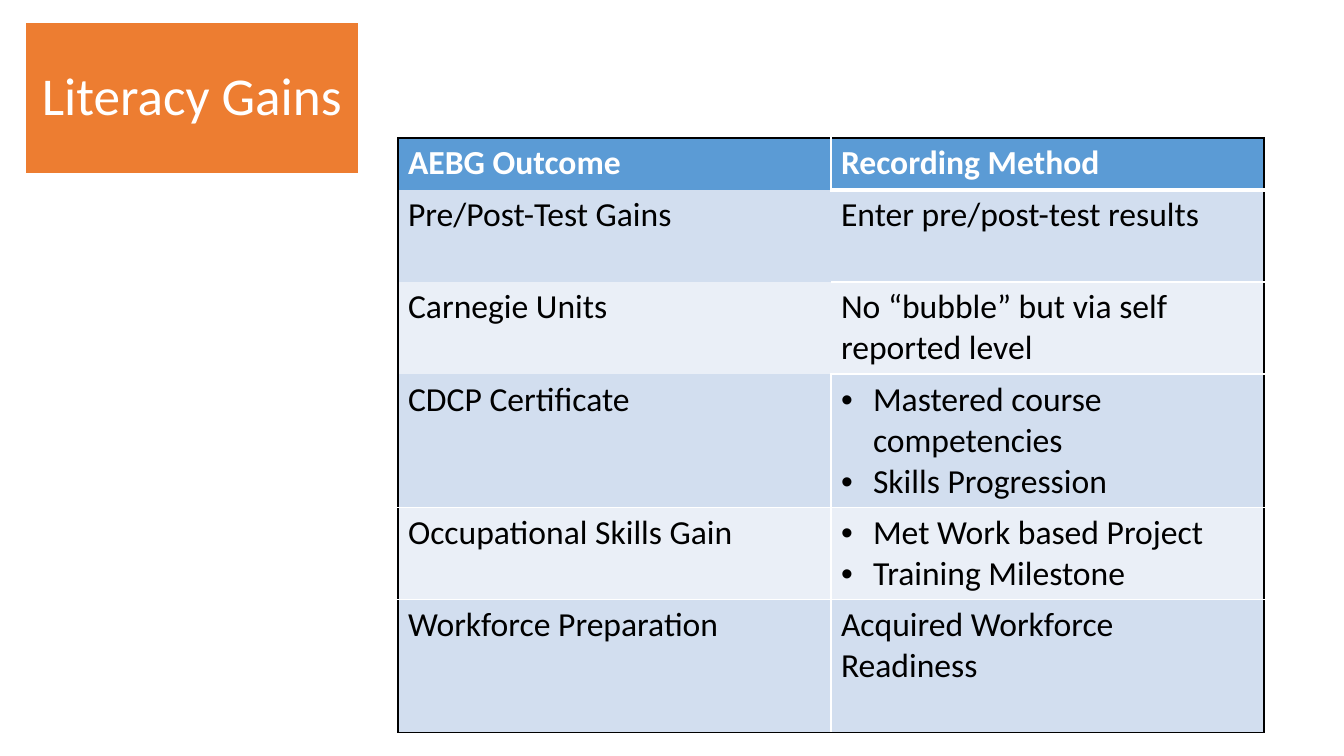
from pptx import Presentation, util as u
from pptx.dml.color import RGBColor
from pptx.enum import shapes, text
from pptx.oxml import parse_xml
from pptx.oxml.ns import nsdecls

THEME = {
    "font": "Calibri", "title_size": 38, "table_size": 24,
    "orange": "ED7D31", "header": "5B9BD5", "bands": ("D2DEEF", "EAEFF7"),
    "white": "FFFFFF", "black": "000000",
}
PX = 914400 / 100.8
BULLET_INDENT = round(32 * PX)


def px(*lengths):
    return [u.Emu(round(length * PX)) for length in lengths]


def style(font, size, color, bold=False):
    formats = {"name": THEME["font"], "size": u.Pt(size), "bold": bold}
    for key, value in formats.items():
        setattr(font, key, value)
    font.color.rgb = RGBColor.from_string(color)


prs = Presentation()
prs.slide_width, prs.slide_height = px(1344, 756)
slide = prs.slides.add_slide(prs.slide_layouts[6])

# Title block
title = slide.shapes.add_shape(shapes.MSO_SHAPE.RECTANGLE, *px(25, 22, 334, 152))
title.shadow.inherit = False
title.fill.solid()
title.fill.fore_color.rgb = RGBColor.from_string(THEME["orange"])
title.line.color.rgb = RGBColor.from_string(THEME["white"])
title.line.width = u.Pt(1)
frame = title.text_frame
frame_format = {"word_wrap": False, "vertical_anchor": text.MSO_ANCHOR.MIDDLE}
frame_format.update({f"margin_{side}": px(16)[0]
                     for side in ("left", "top", "right", "bottom")})
for key, value in frame_format.items():
    setattr(frame, key, value)
heading = frame.paragraphs[0]
heading.text = "Literacy Gains"
heading.alignment = text.PP_ALIGN.CENTER
heading.line_spacing = 0.9
style(heading.font, THEME["title_size"], THEME["white"])

# Outcomes: row height, outcome, recording method (a list is bulleted)
outcomes = [
    (52, "AEBG Outcome", "Recording Method"),
    (92, "Pre/Post-Test Gains", "Enter pre/post-test results"),
    (92, "Carnegie Units", "No “bubble” but via self reported level"),
    (133, "CDCP Certificate", ["Mastered course competencies", "Skills Progression"]),
    (92, "Occupational Skills Gain", ["Met Work based Project", "Training Milestone"]),
    (133, "Workforce Preparation", "Acquired Workforce Readiness"),
]
last = len(outcomes) - 1
total_height = sum(height for height, *_ in outcomes)
table = slide.shapes.add_table(len(outcomes), 2, *px(398, 138, 866, total_height)).table
for column in table.columns:
    column.width = px(433)[0]

for row, (height, *entries) in enumerate(outcomes):
    table.rows[row].height = px(height)[0]
    for col, entry in enumerate(entries):
        cell = table.cell(row, col)
        bulleted = isinstance(entry, list)
        lines = entry if bulleted else [entry]
        cell.text = "\n".join(lines)
        for paragraph in cell.text_frame.paragraphs:
            if bulleted:
                props = paragraph._p.get_or_add_pPr()
                props.set("marL", str(BULLET_INDENT))
                props.set("indent", str(-BULLET_INDENT))
                props.append(parse_xml(f'<a:buFont {nsdecls("a")} typeface="Arial"/>'))
                props.append(parse_xml(f'<a:buChar {nsdecls("a")} char="•"/>'))
            style(paragraph.font, THEME["table_size"],
                  THEME["black" if row else "white"], bold=row == 0)
        cell.fill.solid()
        cell.fill.fore_color.rgb = RGBColor.from_string(
            THEME["bands"][(row - 1) % 2] if row else THEME["header"])

        # Black outer frame, white inner rules; the first two outcomes stay open
        open_row = row in (1, 2)
        inner = {
            "L": not open_row,
            "R": not open_row,
            "T": col == 1 or row > 3,
            "B": col == 1 or row > 2,
        }
        outer = {"L": col == 0, "R": col == 1, "T": row == 0, "B": row == last}
        cell_props = cell._tc.get_or_add_tcPr()
        for place, side in enumerate("LRTB"):
            width = 3 if (row, col, side) == (0, 1, "B") else 1
            color = THEME["black" if outer[side] else "white"]
            paint = (f'<a:solidFill><a:srgbClr val="{color}"/></a:solidFill>'
                     if outer[side] or inner[side] else "<a:noFill/>")
            cell_props.insert(place, parse_xml(
                f'<a:ln{side} {nsdecls("a")} w="{u.Pt(width)}">{paint}</a:ln{side}>'))

prs.save("out.pptx")
